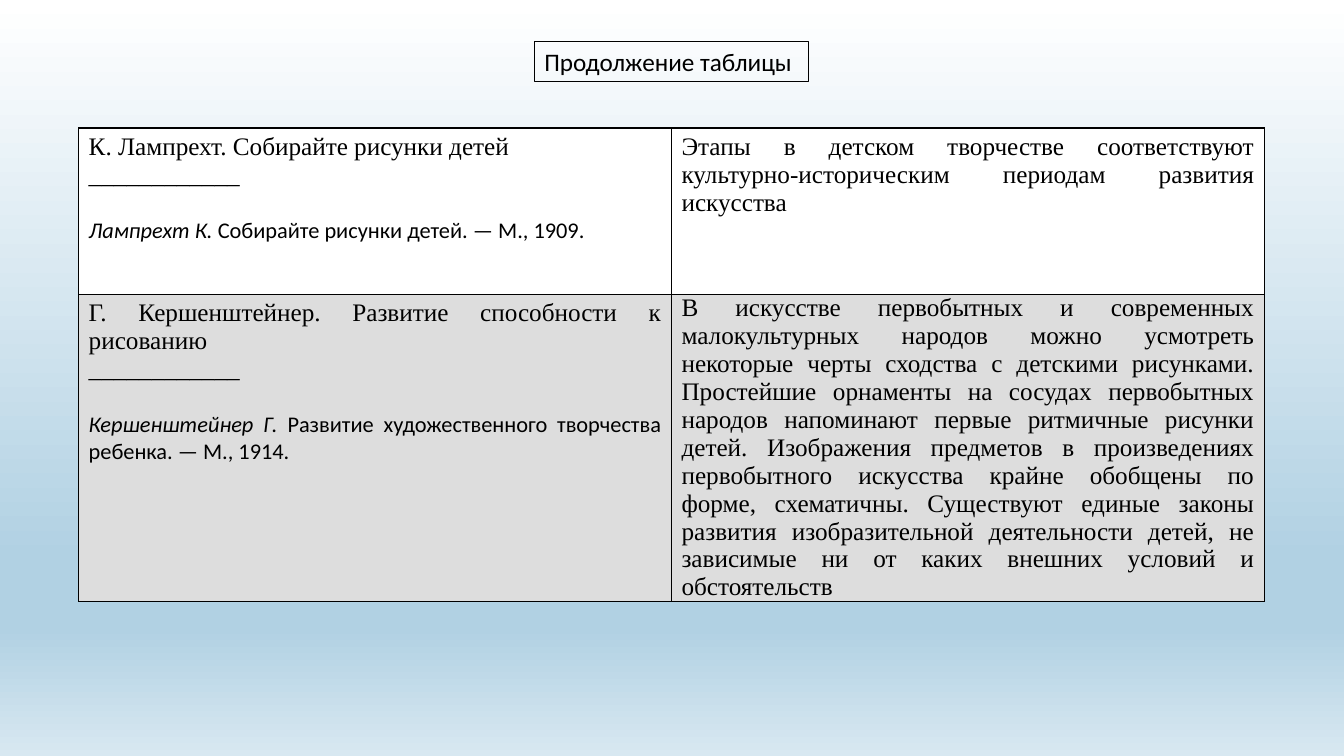
from lxml import etree
from pptx import Presentation
from pptx.dml.color import RGBColor
from pptx.enum.shapes import MSO_SHAPE
from pptx.enum.text import MSO_ANCHOR, PP_ALIGN
from pptx.oxml.ns import qn
from pptx.util import Inches, Pt

RECTANGLE = MSO_SHAPE.RECTANGLE
LEFT, JUSTIFY = PP_ALIGN.LEFT, PP_ALIGN.JUSTIFY
TOP, MIDDLE = MSO_ANCHOR.TOP, MSO_ANCHOR.MIDDLE

BLACK, WHITE, GREY = "000000", "FFFFFF", "DDDDDD"
SKY_STOPS = [(0, WHITE), (74, "B1D1E3"), (83, "B1D1E3"), (100, "D8E8F1")]
SERIF = {"name": "Times New Roman", "size": Pt(18)}
SANS = {"name": "Calibri", "size": Pt(18)}
SOURCE = {"name": "Calibri", "size": Pt(16), "italic": False}
AUTHOR = {**SOURCE, "italic": True}
JUSTIFIED = {"alignment": JUSTIFY}
CITATION = {"alignment": JUSTIFY, "space_before": Pt(20)}
TIGHT = {"margin_top": 0, "margin_bottom": 0}
RULE = "____________"


def color(value):
    return RGBColor.from_string(value)


def apply(target, values):
    for name, value in values.items():
        setattr(target, name, value)


def work(title, author, publication):
    """Paragraphs for a work: its title, a rule and the cited publication."""
    return [
        (JUSTIFIED, [(title, SERIF)]),
        (JUSTIFIED, [(RULE, SERIF)]),
        (CITATION, [(author, AUTHOR), (publication, SOURCE)]),
    ]


def idea(text):
    return [(JUSTIFIED, [(text, SERIF)])]


class SlideBuilder:
    def __init__(self, deck):
        self.page = deck.slides.add_slide(deck.slide_layouts[6])
        self.ink = BLACK

    def background(self, stops):
        fill = self.page.background.fill
        fill.gradient()
        fill.gradient_angle = 270
        stop_list = self.page.element.find(".//" + qn("a:gsLst"))
        for stop in list(stop_list):
            stop_list.remove(stop)
        for percent, value in stops:
            stop = etree.SubElement(stop_list, qn("a:gs"), pos=str(percent * 1000))
            etree.SubElement(stop, qn("a:srgbClr"), val=value)

    def text(self, frame, paragraphs):
        for index, (layout, spans) in enumerate(paragraphs):
            para = frame.add_paragraph() if index else frame.paragraphs[0]
            apply(para, layout)
            for words, style in spans:
                span = para.add_run()
                span.text = words
                apply(span.font, style)
                span.font.color.rgb = color(self.ink)

    def framed_label(self, left, top, width, height, words):
        box = self.page.shapes.add_shape(
            RECTANGLE, Inches(left), Inches(top), Inches(width), Inches(height))
        box.shadow.inherit = False
        box.fill.background()
        box.line.color.rgb = color(self.ink)
        box.line.width = Pt(0.75)
        apply(box.text_frame, {"word_wrap": True, "vertical_anchor": MIDDLE})
        self.text(box.text_frame, [({"alignment": LEFT}, [(words, SANS)])])

    def cell_borders(self, cell):
        properties = cell._tc.get_or_add_tcPr()
        for index, side in enumerate(("lnL", "lnR", "lnT", "lnB")):
            line = etree.Element(qn("a:" + side), w=str(Pt(1)))
            fill = etree.SubElement(line, qn("a:solidFill"))
            etree.SubElement(fill, qn("a:srgbClr"), val=self.ink)
            properties.insert(index, line)

    def table(self, left, top, column_widths, rows):
        """Draw rows given as (height, fill, cells); a cell is (format, paragraphs)."""
        table = self.page.shapes.add_table(
            len(rows), len(column_widths), Inches(left), Inches(top),
            Inches(sum(column_widths)), Inches(sum(row[0] for row in rows))).table
        for column, width in zip(table.columns, column_widths):
            column.width = Inches(width)
        for row, (height, fill, cells) in zip(table.rows, rows):
            row.height = Inches(height)
            for cell, (layout, paragraphs) in zip(row.cells, cells):
                apply(cell, {"vertical_anchor": TOP, **layout})
                cell.fill.solid()
                cell.fill.fore_color.rgb = color(fill)
                self.cell_borders(cell)
                self.text(cell.text_frame, paragraphs)


def main():
    deck = Presentation()
    deck.slide_width, deck.slide_height = Inches(13.33), Inches(7.5)
    slide = SlideBuilder(deck)
    slide.background(SKY_STOPS)
    lamprecht = work("К. Лампрехт. Собирайте рисунки детей",
                     "Лампрехт К.", " Собирайте рисунки детей. — М., 1909.")
    stages = idea("Этапы в детском творчестве соответствуют "
                  "культурно-историческим периодам развития искусства")
    kerschensteiner = work("Г. Кершенштейнер. Развитие способности к рисованию",
                           "Кершенштейнер Г.",
                           " Развитие художественного творчества ребенка. — М., 1914.")
    likeness = idea(
        "В искусстве первобытных и современных малокультурных народов можно "
        "усмотреть некоторые черты сходства с детскими рисунками. Простейшие "
        "орнаменты на сосудах первобытных народов напоминают первые ритмичные "
        "рисунки детей. Изображения предметов в произведениях первобытного "
        "искусства крайне обобщены по форме, схематичны. Существуют единые законы "
        "развития изобразительной деятельности детей, не зависимые ни от каких "
        "внешних условий и обстоятельств")
    slide.table(0.78, 1.27, [5.88, 5.88], [
        (1.65, WHITE, [({}, lamprecht), ({}, stages)]),
        (3.04, GREY, [({}, kerschensteiner), (TIGHT, likeness)]),
    ])
    slide.framed_label(5.3, 0.41, 2.72, 0.4, "Продолжение таблицы")
    deck.save("out.pptx")


if __name__ == "__main__":
    main()
